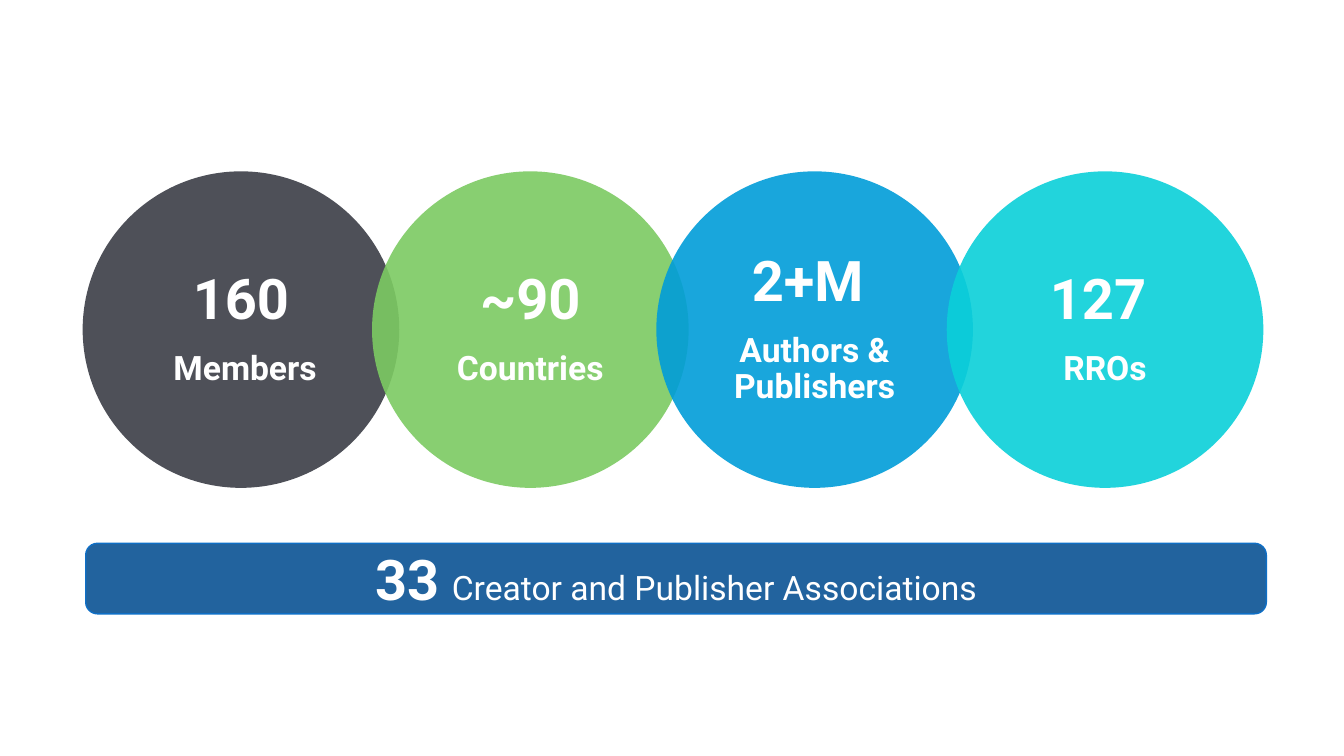
from dataclasses import dataclass

from pptx import Presentation
from pptx.dml.color import RGBColor
from pptx.enum.shapes import MSO_SHAPE
from pptx.enum.text import MSO_ANCHOR, PP_ALIGN
from pptx.oxml.ns import qn
from pptx.util import Emu, Pt
from lxml import etree

OVAL = MSO_SHAPE.OVAL
ROUNDED = MSO_SHAPE.ROUNDED_RECTANGLE
MIDDLE = MSO_ANCHOR.MIDDLE
CENTER = PP_ALIGN.CENTER

EMU_PER_PX = 9144
COLORS = {
    "members": "3B3D46",
    "countries": "7CCA62",
    "authors": "009DD9",
    "rros": "0BD0D9",
    "associations": "0B5394",
    "border": "0F6FC6",
    "text": "FFFFFF",
}
FONT = "Roboto"
CIRCLE_TOP, CIRCLE_SIZE = 170, 314
NUMBER_SIZE, LABEL_SIZE = 40, 24


@dataclass(frozen=True)
class Statistic:
    left: int
    color: str
    number: str
    label: str


STATISTICS = [
    Statistic(82, "members", "160", " Members"),
    Statistic(369, "countries", "~90", "Countries"),
    Statistic(651, "authors", "2+M ", "Authors & Publishers"),
    Statistic(939, "rros", "127 ", "RROs"),
]


def px(length: int) -> Emu:
    return Emu(length * EMU_PER_PX)


def rgb(name: str) -> RGBColor:
    return RGBColor.from_string(COLORS[name])


def add_panel(slide, kind, left: int, top: int, width: int, height: int, color: str):
    panel = slide.shapes.add_shape(kind, px(left), px(top), px(width), px(height))
    panel.shadow.inherit = False
    panel.fill.solid()
    panel.fill.fore_color.rgb = rgb(color)
    tint = panel.fill._xPr.find(qn("a:solidFill"))[0]
    etree.SubElement(tint, qn("a:alpha"), val="90000")
    panel.line.fill.background()
    frame = panel.text_frame
    frame.word_wrap = True
    frame.vertical_anchor = MIDDLE
    return panel


def add_text(paragraph, text: str, *, size: int, bold: bool = True) -> None:
    paragraph.alignment = CENTER
    run = paragraph.add_run()
    run.text = text
    run.font.name = FONT
    run.font.size = Pt(size)
    run.font.bold = bold
    run.font.color.rgb = rgb("text")


def add_statistic(slide, statistic: Statistic) -> None:
    circle = add_panel(slide, OVAL, statistic.left, CIRCLE_TOP,
                       CIRCLE_SIZE, CIRCLE_SIZE, statistic.color)
    frame = circle.text_frame
    frame.margin_left = frame.margin_right = px(5)
    number = frame.paragraphs[0]
    label = frame.add_paragraph()
    number.line_spacing = label.line_spacing = 0.9
    number.space_after = Pt(14)
    add_text(number, statistic.number, size=NUMBER_SIZE)
    add_text(label, statistic.label, size=LABEL_SIZE)


def add_associations(slide) -> None:
    bar = add_panel(slide, ROUNDED, 85, 539, 1171, 70, "associations")
    bar.line.color.rgb = rgb("border")
    bar.line.width = Pt(1)
    line = bar.text_frame.paragraphs[0]
    add_text(line, "33", size=NUMBER_SIZE)
    add_text(line, " ", size=36, bold=False)
    add_text(line, "Creator and Publisher Associations", size=LABEL_SIZE, bold=False)


def main() -> None:
    deck = Presentation()
    deck.slide_width, deck.slide_height = px(1333), px(750)
    slide = deck.slides.add_slide(deck.slide_layouts[6])
    for statistic in STATISTICS:
        add_statistic(slide, statistic)
    add_associations(slide)
    deck.save("out.pptx")


if __name__ == "__main__":
    main()
